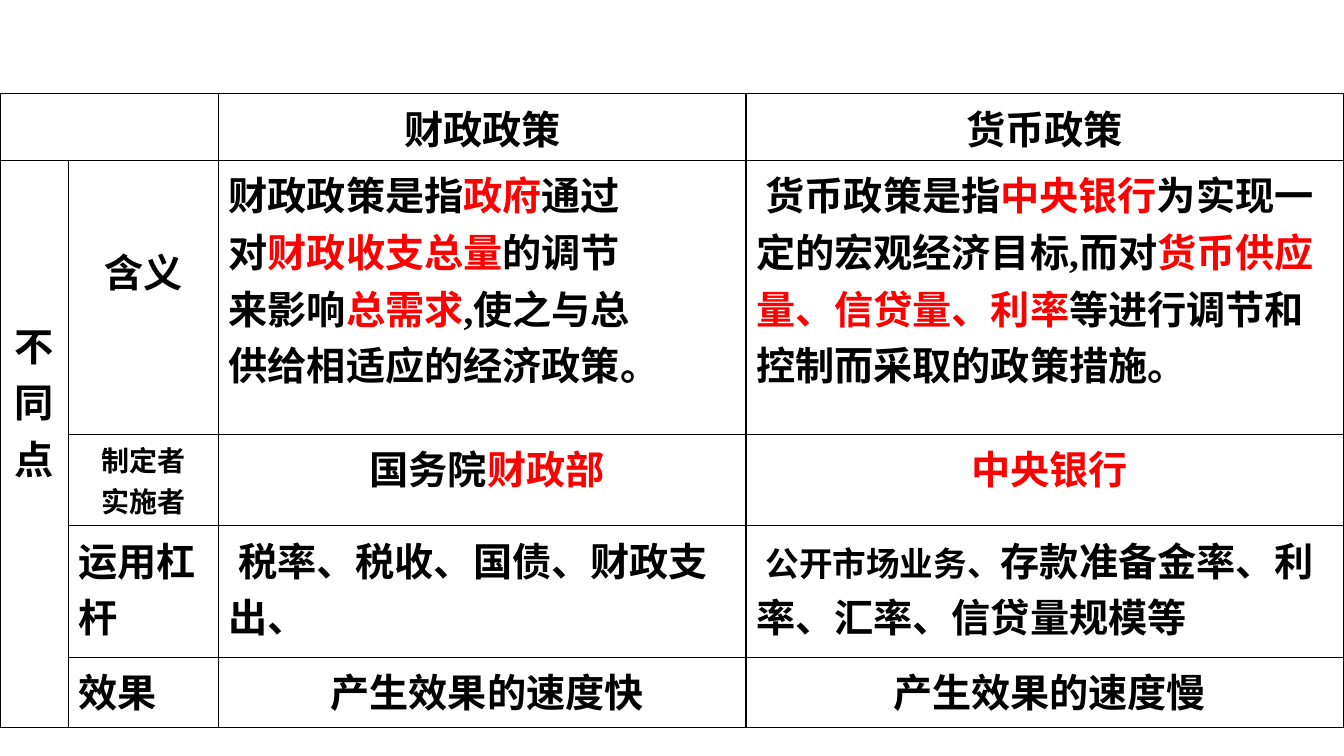
from dataclasses import dataclass

from lxml.etree import SubElement
from pptx import Presentation
from pptx.dml.color import RGBColor
from pptx.enum.lang import MSO_LANGUAGE_ID as Lang
from pptx.enum.text import MSO_ANCHOR as Anchor, PP_ALIGN as Align
from pptx.oxml.ns import qn
from pptx.util import Cm, Pt

COLORS = {"ink": "000000", "key": "FF0000", "paper": "FFFFFF"}


@dataclass
class Span:
    text: str
    color: str = "ink"
    size: int = 28
    font: str = "Times New Roman"


def key(text):
    return Span(text, "key")


class PolicySlide:
    """Holds the slide and the style of its table."""

    def __init__(self, deck):
        self.slide = deck.slides.add_slide(deck.slide_layouts[6])
        self.border = Pt(1)
        self.indent = Cm(0.24)

    def add_grid(self, left, top, widths, heights):
        frame = self.slide.shapes.add_table(
            len(heights), len(widths), Cm(left), Cm(top),
            Cm(sum(widths)), Cm(sum(heights)))
        grid = frame.table
        grid.first_row = grid.horz_banding = False
        for column, width in zip(grid.columns, widths):
            column.width = Cm(width)
        for row, height in zip(grid.rows, heights):
            row.height = Cm(height)
        for cell in grid.iter_cells():
            self.style_cell(cell)
        return grid

    def style_cell(self, cell):
        props = cell._tc.get_or_add_tcPr()
        for side in ("a:lnL", "a:lnR", "a:lnT", "a:lnB"):
            line = SubElement(props, qn(side), w=str(self.border))
            fill = SubElement(line, qn("a:solidFill"))
            SubElement(fill, qn("a:srgbClr"), val=COLORS["ink"])
        cell.fill.solid()
        cell.fill.fore_color.rgb = RGBColor.from_string(COLORS["paper"])

    def fill_cell(self, cell, paragraphs, align=Align.LEFT, indented=False):
        frame = cell.text_frame
        for index, spans in enumerate(paragraphs):
            paragraph = frame.add_paragraph() if index else frame.paragraphs[0]
            paragraph.alignment = align
            if indented:
                props = paragraph._p.get_or_add_pPr()
                props.set("marL", "0")
                props.set("indent", str(self.indent))
            for span in spans:
                self.add_span(paragraph, span)

    def add_span(self, paragraph, span):
        run = paragraph.add_run()
        run.text = span.text
        font = run.font
        font.name, font.size, font.bold = span.font, Pt(span.size), True
        font.color.rgb = RGBColor.from_string(COLORS[span.color])
        font.language_id = Lang.SIMPLIFIED_CHINESE

    def raise_middle(self, cell, bottom):
        """Centre the text above a deep bottom margin."""
        cell.vertical_anchor = Anchor.MIDDLE
        cell.margin_bottom = Cm(bottom)


def main():
    deck = Presentation()
    deck.slide_width, deck.slide_height = Cm(33.87), Cm(19.05)
    page = PolicySlide(deck)
    grid = page.add_grid(0, 2.36, [1.73, 3.78, 13.29, 15.06],
                         [1.68, 6.9, 2.3, 3.32, 1.76])
    cell = grid.cell
    cell(0, 0).merge(cell(0, 1))
    cell(1, 0).merge(cell(4, 0))

    # Column heads
    for column, policy in enumerate(("财政政策", "货币政策"), 2):
        page.fill_cell(cell(0, column), [[Span(policy)]], Align.CENTER)

    # Row heads
    page.fill_cell(cell(1, 0), [[Span("不同点")]], Align.CENTER)
    page.raise_middle(cell(1, 0), 2.3)
    page.fill_cell(cell(1, 1), [[Span("含义")]], Align.CENTER)
    page.raise_middle(cell(1, 1), 1.5)
    makers = [[Span(role, size=20)] for role in ("制定者", "实施者")]
    page.fill_cell(cell(2, 1), makers, Align.CENTER)
    page.fill_cell(cell(3, 1), [[Span("运用杠杆")]])
    page.fill_cell(cell(4, 1), [[Span("效果")]])

    # Meaning of each policy
    page.fill_cell(cell(1, 2), [
        [Span("财政政策是指"), key("政府"), Span("通过")],
        [Span("对"), key("财政收支总量"), Span("的调节")],
        [Span("来影响"), key("总需求"), Span(",使之与总")],
        [Span("供给相适应的经济政策。")],
    ])
    page.fill_cell(cell(1, 3), [[
        Span("货币政策是指"), key("中央银行"),
        Span("为实现一定的宏观经济目标,而对"),
        key("货币供应量、信贷量、利率"),
        Span("等进行调节和控制而采取的政策措施。"),
    ]], indented=True)

    # Makers, levers and effects
    page.fill_cell(cell(2, 2), [[Span("国务院"), key("财政部")]],
                   Align.CENTER, True)
    page.fill_cell(cell(2, 3), [[key("中央银行")]], Align.CENTER, True)
    page.fill_cell(cell(3, 2), [[Span("税率、税收、国债、财政支出、")]],
                   indented=True)
    page.fill_cell(cell(3, 3), [[
        Span("公开市场业务、", size=24, font="Arial"),
        Span("存款准备金率、利率、汇率、信贷量规模等"),
    ]], indented=True)
    for column, speed in enumerate("快慢", 2):
        page.fill_cell(cell(4, column), [[Span("产生效果的速度" + speed)]],
                       Align.CENTER, True)

    deck.save("out.pptx")


if __name__ == "__main__":
    main()
